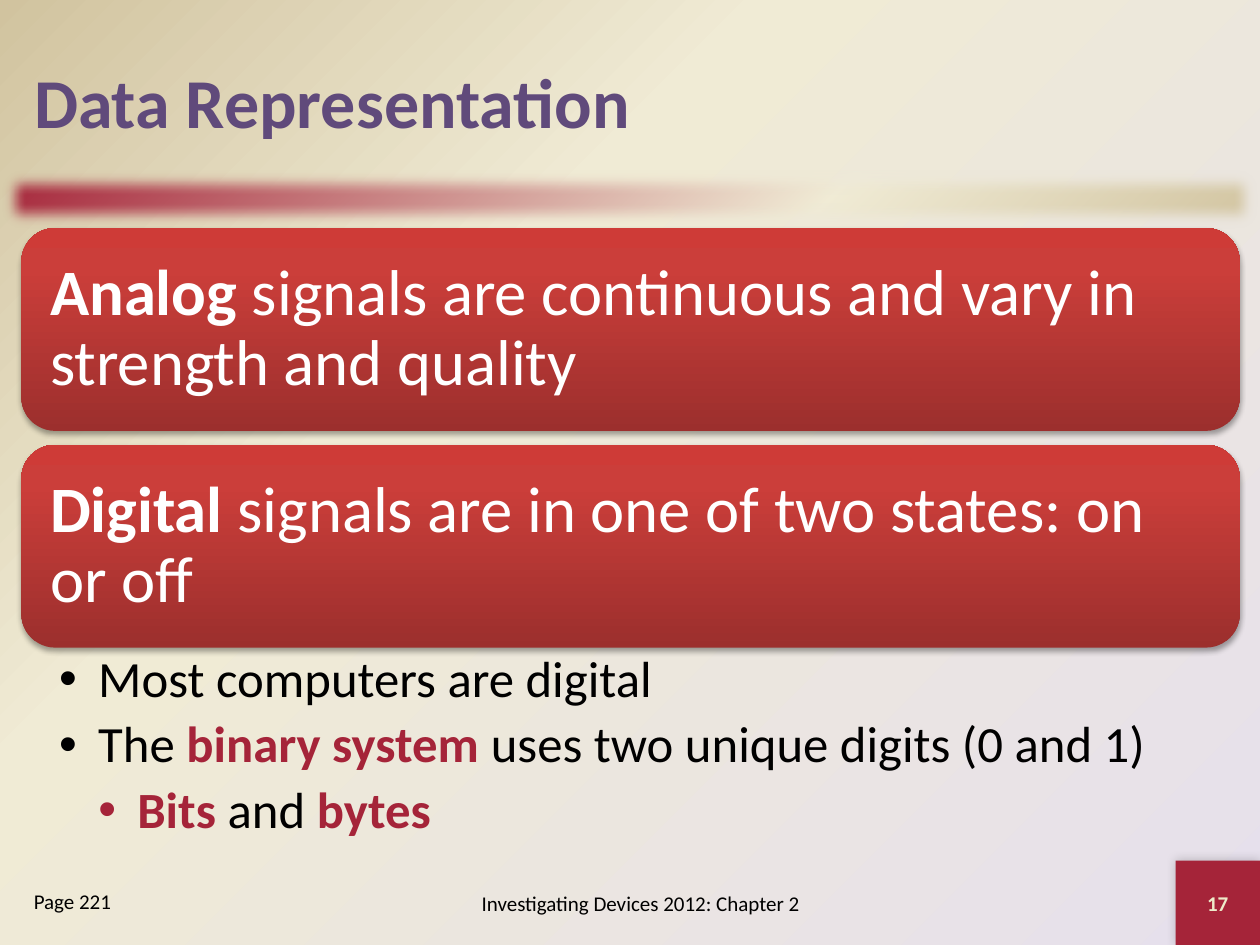
from lxml.etree import SubElement
from pptx import Presentation
from pptx.dml.color import RGBColor
from pptx.enum.shapes import MSO_SHAPE as Shape
from pptx.enum.text import MSO_ANCHOR as Anchor, PP_ALIGN as Align
from pptx.oxml.ns import qn
from pptx.util import Inches, Pt

CRIMSON, CREAM, TAN, LAVENDER = "A52439", "F0EBD5", "D1C39F", "E6E0EC"
PURPLE, BLACK, WHITE, PALE = "604A7B", "000000", "FFFFFF", "EEEBCA"
CARD_STOPS = [(0, "9C2F2D"), (80, "CB3E3A"), (100, "CE3B37")]


def rgb(color):
    """Turn a hex string into a colour."""
    return RGBColor.from_string(color)


def add_xml(parent, tag, **attributes):
    """Append one element with its attributes given as plain values."""
    return SubElement(parent, qn(tag), {key: str(value) for key, value in attributes.items()})


def paint_gradient(fill, owner, stops, angle=None):
    """Fill with a linear gradient, or a circular one from the lower right corner."""
    fill.gradient()
    gradient = next(owner.iter(qn("a:gradFill")))
    for child in list(gradient):
        gradient.remove(child)
    stop_list = add_xml(gradient, "a:gsLst")
    for position, color in stops:
        stop = add_xml(stop_list, "a:gs", pos=position * 1000)
        add_xml(stop, "a:srgbClr", val=color)
    if angle is None:
        route = add_xml(gradient, "a:path", path="circle")
        add_xml(route, "a:fillToRect", l=100000, t=100000)
    else:
        add_xml(gradient, "a:lin", ang=angle * 60000, scaled=0)


class SlideBuilder:
    """Hold the style and the slide being built."""

    font = "Calibri"

    def __init__(self, deck):
        """Add a title-only slide to the deck."""
        self.slide = deck.slides.add_slide(deck.slide_layouts[5])

    def background(self, stops):
        """Paint the slide background."""
        paint_gradient(self.slide.background.fill, self.slide.element, stops)

    def add_runs(self, paragraph, parts, size, color, align=Align.LEFT):
        """Add (text, bold, colour) parts, where no colour means the given one."""
        paragraph.alignment = align
        for text, bold, accent in parts:
            run = paragraph.add_run()
            run.text = text
            run.font.name, run.font.size, run.font.bold = self.font, Pt(size), bold
            run.font.color.rgb = rgb(accent or color)

    def frame(self, shape, anchor, side=0.1, edge=0.05):
        """Prepare the text frame of a shape."""
        frame = shape.text_frame
        frame.word_wrap = True
        frame.vertical_anchor = anchor
        frame.margin_left = frame.margin_right = Inches(side)
        frame.margin_top = frame.margin_bottom = Inches(edge)
        return frame

    def title(self, text, *box):
        """Place and format the title."""
        heading = self.slide.shapes.title
        heading.left, heading.top, heading.width, heading.height = map(Inches, box)
        frame = self.frame(heading, Anchor.MIDDLE)
        self.add_runs(frame.paragraphs[0], [(text, True, None)], 40, PURPLE)

    def panel(self, kind, box, fill, angle=0):
        """Add an unlined shape with a plain or gradient fill."""
        shape = self.slide.shapes.add_shape(kind, *map(Inches, box))
        shape.line.fill.background()
        shape.shadow.inherit = False
        if isinstance(fill, str):
            shape.fill.solid()
            shape.fill.fore_color.rgb = rgb(fill)
        else:
            paint_gradient(shape.fill, shape.element.spPr, fill, angle)
        return shape

    def effect(self, shape, tag, **attributes):
        """Add an effect to a shape."""
        return add_xml(shape.element.spPr.find(qn("a:effectLst")), tag, **attributes)

    def shadow(self, shape, opacity, blur, distance, angle):
        """Add a black outer shadow."""
        shade = self.effect(shape, "a:outerShdw", blurRad=Pt(blur), dist=Pt(distance),
                            dir=angle * 60000, rotWithShape=0)
        add_xml(add_xml(shade, "a:srgbClr", val=BLACK), "a:alpha", val=opacity * 1000)

    def band(self, *box):
        """Add the soft-edged rule under the title."""
        rule = self.panel(Shape.RECTANGLE, box, [(0, CRIMSON), (65, CREAM), (100, TAN)], 45)
        self.effect(rule, "a:softEdge", rad=Inches(0.12))

    def card(self, term, statement, *box):
        """Add a rounded card that opens with a bold term."""
        card = self.panel(Shape.ROUNDED_RECTANGLE, box, CARD_STOPS, 270)
        self.shadow(card, 35, 3.1, 1.8, 90)
        paragraph = self.frame(card, Anchor.MIDDLE, 0.15, 0.15).paragraphs[0]
        paragraph.line_spacing = 0.9
        self.add_runs(paragraph, [(term, True, None), (statement, False, None)], 37, WHITE)

    def page_number(self, number, *box):
        """Add the corner square with the page number."""
        corner = self.panel(Shape.RECTANGLE, box, CRIMSON)
        self.shadow(corner, 20, 6, 0, 225)
        paragraph = self.frame(corner, Anchor.MIDDLE).paragraphs[0]
        self.add_runs(paragraph, [(number, True, None)], 12, PALE, Align.CENTER)

    def text_box(self, box, anchor, side=0.1):
        """Add an empty text box and return its frame."""
        return self.frame(self.slide.shapes.add_textbox(*map(Inches, box)), anchor, side)

    def label(self, text, box, anchor=Anchor.TOP, align=Align.LEFT):
        """Add a small line of text."""
        paragraph = self.text_box(box, anchor).paragraphs[0]
        self.add_runs(paragraph, [(text, False, None)], 12, BLACK, align)

    def bullets(self, items, *box):
        """Add a bulleted list of (level, parts) items."""
        frame = self.text_box(box, Anchor.TOP, 0.3)
        for index, (level, parts) in enumerate(items):
            paragraph = frame.add_paragraph() if index else frame.paragraphs[0]
            paragraph.level = level
            paragraph.line_spacing, paragraph.space_after = 0.9, Pt(6)
            self.add_runs(paragraph, parts, 29, BLACK)
            properties = paragraph._p.get_or_add_pPr()
            properties.set("marL", str(Inches(0.31 * level)))
            properties.set("indent", str(Inches(-0.31)))
            add_xml(properties, "a:buFont", typeface="Arial")
            add_xml(properties, "a:buChar", char="•")


def main():
    """Build the slide and save it."""
    deck = Presentation()
    deck.slide_width, deck.slide_height = Inches(10), Inches(7.5)
    builder = SlideBuilder(deck)
    left, width = 0.17, 9.67
    builder.background([(0, LAVENDER), (65, CREAM), (100, TAN)])
    builder.band(0, 1.33, 10, 0.5)
    builder.page_number("17", 9.33, 6.83, 0.67, 0.67)
    builder.title("Data Representation", left, 0.17, width, 1.25)

    signals = [
        ("Analog", " signals are continuous and vary in strength and quality"),
        ("Digital", " signals are in one of two states: on or off"),
    ]
    for row, (term, statement) in enumerate(signals):
        builder.card(term, statement, left, 1.81 + 1.72 * row, width, 1.61)

    facts = [
        (1, [("Most computers are digital", False, None)]),
        (1, [("The ", False, None), ("binary system ", True, CRIMSON),
             ("uses two unique digits (0 and 1)", False, None)]),
        (2, [("Bits", True, CRIMSON), (" and ", False, None), ("bytes", True, CRIMSON)]),
    ]
    builder.bullets(facts, left, 5.14, width, 1.63)
    builder.label("Investigating Devices 2012: Chapter 2", (3, 6.92, 4.17, 0.5),
                  Anchor.MIDDLE, Align.CENTER)
    builder.label("Page 221", (left, 7, 1.83, 0.5))
    deck.save("out.pptx")


if __name__ == "__main__":
    main()
